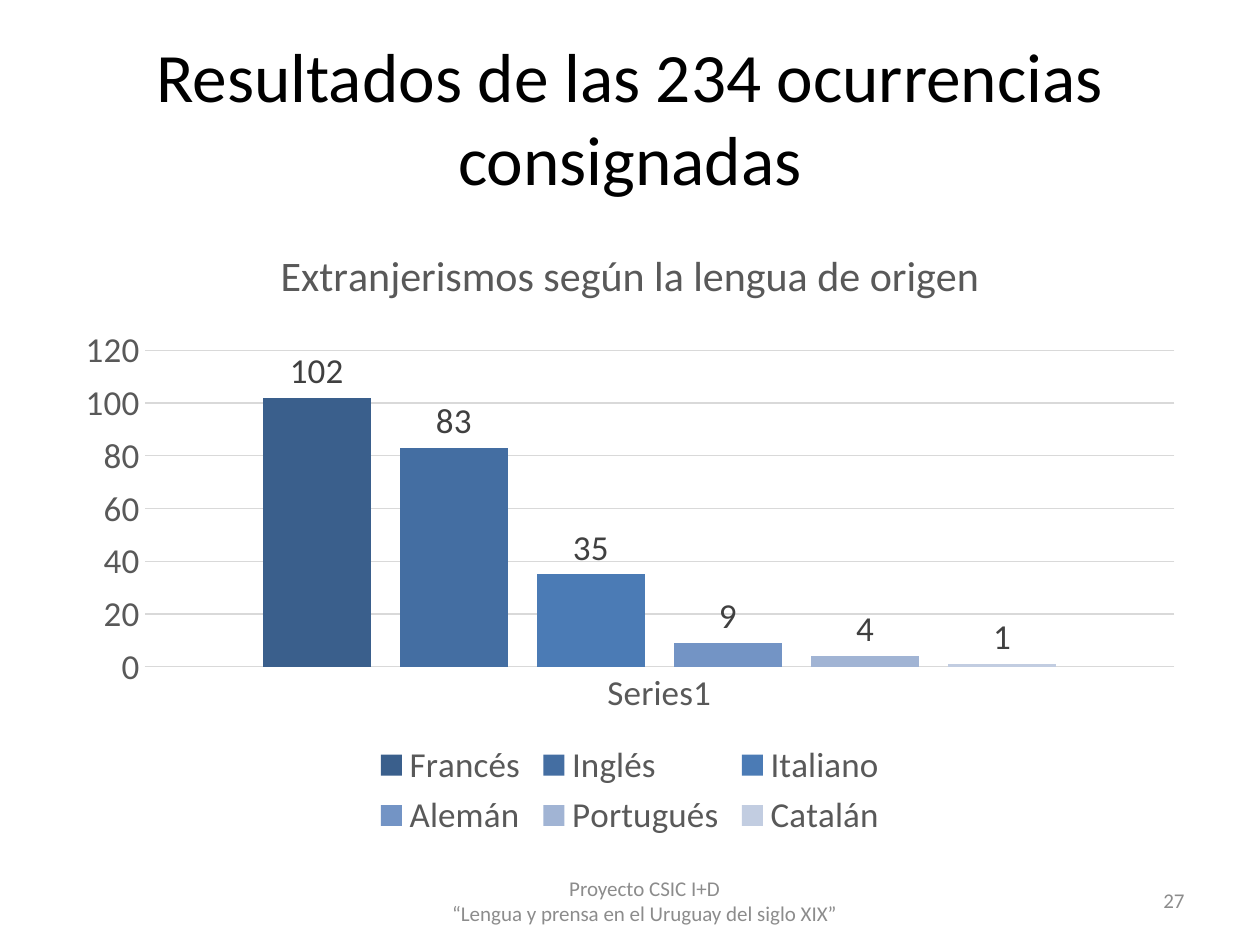
from dataclasses import dataclass

from pptx import Presentation
from pptx import util as u
from pptx.chart.data import CategoryChartData
from pptx.dml.color import RGBColor
from pptx.enum import chart as charts, text


@dataclass(frozen=True)
class Theme:
    font: str = "Calibri"
    title_ink: str = "000000"
    chart_ink: str = "595959"
    label_ink: str = "404040"
    footer_ink: str = "8C8C8C"
    grid: str = "D9D9D9"
    title_size: float = 39.6
    chart_title_size: float = 24
    chart_size: float = 20
    footer_size: float = 12


@dataclass(frozen=True)
class Box:
    """A region of the page, in centimetres."""
    left: float
    top: float
    width: float
    height: float

    def lengths(self):
        return [u.Cm(side) for side in (self.left, self.top, self.width, self.height)]


THEME = Theme()
LANGUAGES = [
    ("Francés", 102, "3A5F8C"),
    ("Inglés", 83, "446EA2"),
    ("Italiano", 35, "4B7BB5"),
    ("Alemán", 9, "7394C5"),
    ("Portugués", 4, "A1B4D4"),
    ("Catalán", 1, "C2CDE1"),
]


def style_font(font, size, ink):
    font.name = THEME.font
    font.size = u.Pt(size)
    font.bold = False
    font.color.rgb = RGBColor.from_string(ink)


def style_line(line):
    line.color.rgb = RGBColor.from_string(THEME.grid)
    line.width = u.Pt(0.75)


def write_lines(frame, lines, align, size, ink):
    """Write one paragraph, with a line break between the lines."""
    frame.word_wrap = True
    frame.vertical_anchor = text.MSO_ANCHOR.MIDDLE
    para = frame.paragraphs[0]
    para.alignment = align
    for index, line in enumerate(lines):
        if index:
            para.add_line_break()
        span = para.add_run()
        span.text = line
        style_font(span.font, size, ink)


def place_title(page, box, wording):
    title = page.shapes.title
    title.left, title.top, title.width, title.height = box.lengths()
    write_lines(title.text_frame, [wording], text.PP_ALIGN.CENTER,
                THEME.title_size, THEME.title_ink)


def style_axes(chart):
    for axis in (chart.category_axis, chart.value_axis):
        axis.major_tick_mark = axis.minor_tick_mark = charts.XL_TICK_MARK.NONE
        style_font(axis.tick_labels.font, THEME.chart_size, THEME.chart_ink)
    style_line(chart.category_axis.format.line)
    values = chart.value_axis
    values.minimum_scale, values.maximum_scale, values.major_unit = 0, 120, 20
    values.format.line.fill.background()
    values.has_major_gridlines = True
    style_line(values.major_gridlines.format.line)


def style_columns(plot):
    plot.gap_width = 219
    plot.overlap = -27
    plot.vary_by_categories = False
    for series, (_, _, colour) in zip(plot.series, LANGUAGES):
        series.format.fill.solid()
        series.format.fill.fore_color.rgb = RGBColor.from_string(colour)
        labels = series.data_labels
        labels.show_value = True
        labels.position = charts.XL_LABEL_POSITION.OUTSIDE_END
        style_font(labels.font, THEME.chart_size, THEME.label_ink)


def place_chart(page, box, wording):
    data = CategoryChartData()
    data.categories = ["Series1"]
    for name, count, _ in LANGUAGES:
        data.add_series(name, [count])
    chart = page.shapes.add_chart(
        charts.XL_CHART_TYPE.COLUMN_CLUSTERED, *box.lengths(), data).chart
    style_font(chart.font, THEME.chart_size, THEME.chart_ink)

    chart.has_title = True
    span = chart.chart_title.text_frame.paragraphs[0].add_run()
    span.text = wording
    style_font(span.font, THEME.chart_title_size, THEME.chart_ink)
    chart.chart_title.include_in_layout = False

    chart.has_legend = True
    chart.legend.position = charts.XL_LEGEND_POSITION.BOTTOM
    chart.legend.include_in_layout = False
    style_font(chart.legend.font, THEME.chart_size, THEME.chart_ink)

    style_axes(chart)
    style_columns(chart.plots[0])


def place_footer(page, box, lines, number):
    """Put the project name in the middle and the page number at the right."""
    project = Box(box.left + 7.42, box.top, 8.61, box.height)
    counter = Box(box.left + box.width - 5.92, box.top, 5.92, box.height)
    for part, wording, align in (
        (project, lines, text.PP_ALIGN.CENTER),
        (counter, [number], text.PP_ALIGN.RIGHT),
    ):
        frame = page.shapes.add_textbox(*part.lengths()).text_frame
        write_lines(frame, wording, align, THEME.footer_size, THEME.footer_ink)


def main():
    deck = Presentation()
    deck.slide_width, deck.slide_height = u.Cm(25.4), u.Cm(19.05)
    page = deck.slides.add_slide(deck.slide_layouts.get_by_name("Title Only"))
    margin, width = 1.27, 22.86
    place_title(page, Box(margin, 0.76, width, 3.18),
                "Resultados de las 234 ocurrencias consignadas")
    place_chart(page, Box(margin, 4.45, width, 12.57),
                "Extranjerismos según la lengua de origen")
    place_footer(page, Box(margin, 17.65, width, 1.01),
                 ["Proyecto CSIC I+D", "“Lengua y prensa en el Uruguay del siglo XIX”"],
                 "27")
    deck.save("out.pptx")


if __name__ == "__main__":
    main()
